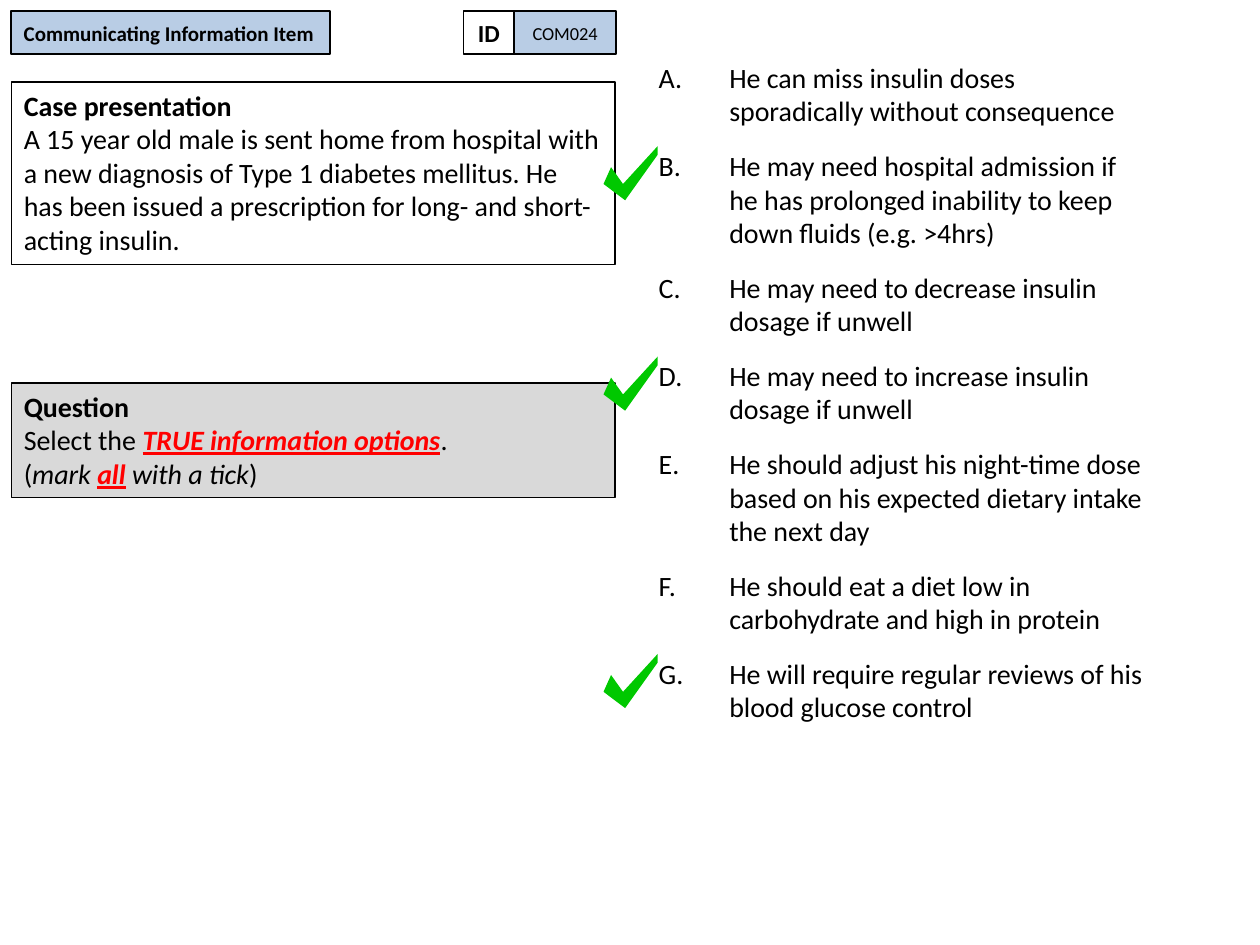
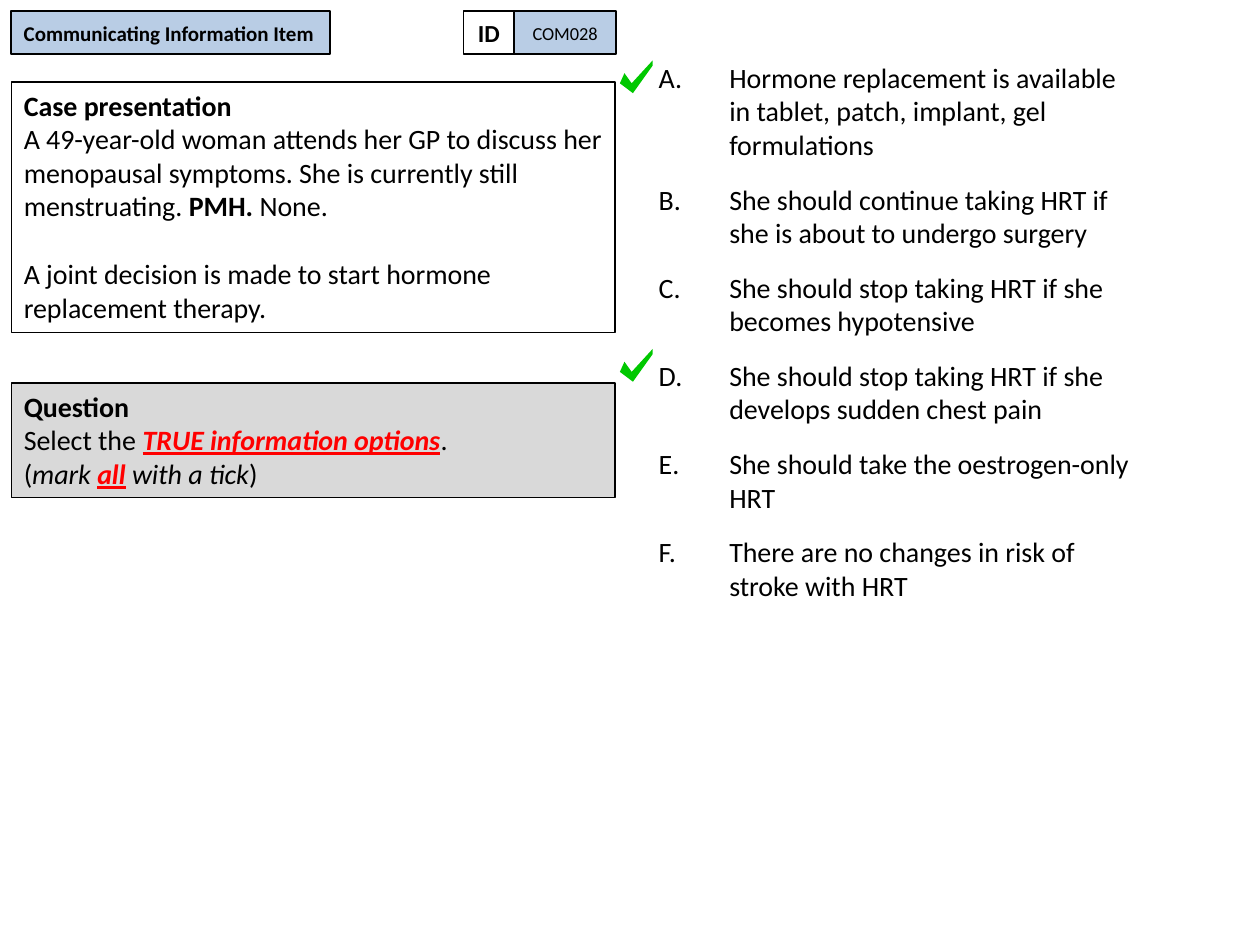
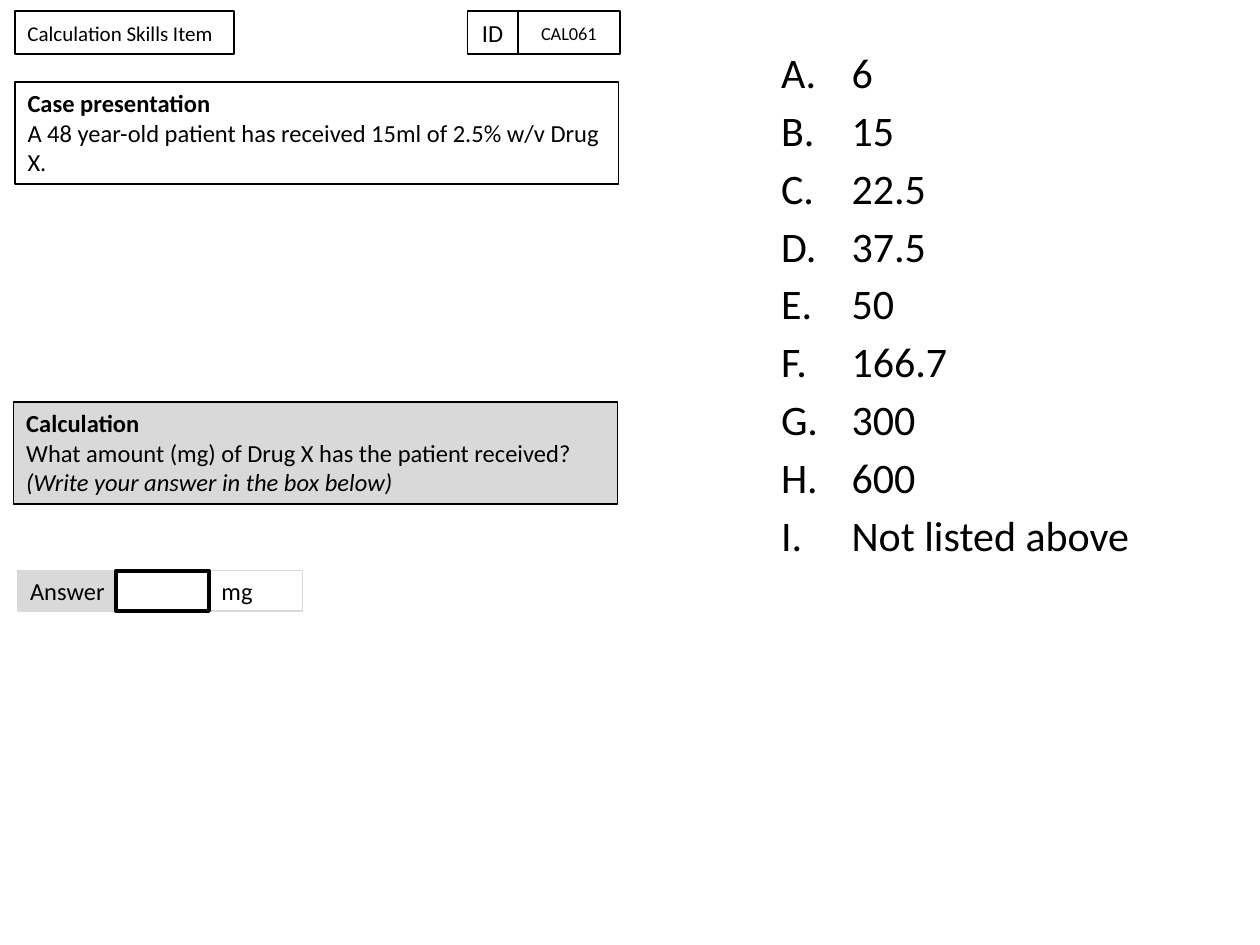
"""Build three quiz slides: two on telling patients facts, one on sums."""
import dataclasses

import lxml.etree
import pptx
import pptx.dml.color
import pptx.enum.shapes
import pptx.enum.text
import pptx.oxml.ns
import pptx.util

Inches = pptx.util.Inches
Pt = pptx.util.Pt
Align = pptx.enum.text.PP_ALIGN
Anchor = pptx.enum.text.MSO_ANCHOR


@dataclasses.dataclass(frozen=True)
class Theme:
    """Hold the colours, font and type sizes."""
    font: str = "Calibri"
    ink: str = "000000"
    paper: str = "FFFFFF"
    blue: str = "B9CDE5"
    grey: str = "D9D9D9"
    red: str = "FF0000"
    green: str = "00C800"
    code: float = 10.5
    title: float = 12
    small: float = 14
    body: float = 16
    large: float = 24


THEME = Theme()
TICK = [(0.14, 0.39), (0, 0.7), (0.4, 1), (1, 0.16), (1, 0), (0.36, 0.7)]
PANEL_WIDTH = 4.79
TASK = [
    [("Question", "b")],
    [("Select the ", ""), ("TRUE information options", "h"), (".", "")],
    [("(", ""), ("mark ", "i"), ("all", "h"), (" with a tick", "i"), (")", "")],
]


def tint(code):
    """Turn a hex code into a colour."""
    return pptx.dml.color.RGBColor.from_string(code)


def add_run(par, text, size, style=""):
    """Add a run; style letters are b bold, i italic, h hot."""
    run = par.add_run()
    run.text = text
    font = run.font
    hot = "h" in style
    font.name = THEME.font
    font.size = Pt(size)
    font.bold = hot or "b" in style
    font.italic = hot or "i" in style
    font.underline = hot
    font.color.rgb = tint(THEME.red if hot else THEME.ink)


def get_par(frame, index):
    """Return the first paragraph or add the next one."""
    return frame.add_paragraph() if index else frame.paragraphs[0]


def add_box(slide, place, fill=None, line=THEME.ink, weight=1):
    """Add a plain box with an outline."""
    box = slide.shapes.add_shape(
        pptx.enum.shapes.MSO_SHAPE.RECTANGLE, *map(Inches, place))
    box.shadow.inherit = False
    if fill:
        box.fill.solid()
        box.fill.fore_color.rgb = tint(fill)
    else:
        box.fill.background()
    box.line.color.rgb = tint(line)
    box.line.width = Pt(weight)
    box.text_frame.word_wrap = True
    return box


def add_tag(slide, place, text, size, style="", align=Align.LEFT, **look):
    """Add a box with one line of text in its middle."""
    frame = add_box(slide, place, **look).text_frame
    frame.vertical_anchor = Anchor.MIDDLE
    par = frame.paragraphs[0]
    par.alignment = align
    add_run(par, text, size, style)


def add_panel(slide, place, rows, size, fill=None, gaps=()):
    """Add a framed text panel; gaps are rows set off by a line."""
    frame = add_box(slide, place, fill, weight=0.75).text_frame
    frame.vertical_anchor = Anchor.TOP
    frame.auto_size = pptx.enum.text.MSO_AUTO_SIZE.SHAPE_TO_FIT_TEXT
    for index, row in enumerate(rows):
        par = get_par(frame, index)
        par.alignment = Align.LEFT
        if index in gaps:
            par.space_before = Pt(size * 1.22)
        for text, style in row:
            add_run(par, text, size, style)


def add_list(slide, place, items, size, gap):
    """Add the lettered answer list."""
    frame = slide.shapes.add_textbox(*map(Inches, place)).text_frame
    frame.word_wrap = True
    for index, item in enumerate(items):
        par = get_par(frame, index)
        par.space_before = Pt(gap)
        props = par._p.get_or_add_pPr()
        props.set("marL", str(Inches(0.56)))
        props.set("indent", str(Inches(-0.56)))
        lxml.etree.SubElement(
            props, pptx.oxml.ns.qn("a:buAutoNum"), type="alphaUcPeriod")
        add_run(par, item, size)


def add_tick(slide, left, top, size):
    """Add a green tick."""
    points = [(Inches(left + x * size), Inches(top + y * size))
              for x, y in TICK]
    pen = slide.shapes.build_freeform(*points[0], scale=1.0)
    pen.add_line_segments(points[1:], close=True)
    tick = pen.convert_to_shape()
    tick.shadow.inherit = False
    tick.fill.solid()
    tick.fill.fore_color.rgb = tint(THEME.green)
    tick.line.fill.background()


def add_head(slide, left, width, title, code, fill, style=""):
    """Add the title tag and the ID pair."""
    top, height = 0.09, 0.34
    add_tag(slide, (left, top, width, height), title, THEME.title, style,
            fill=fill)
    add_tag(slide, (left + 3.99, top, 0.81, height), code, THEME.code,
            align=Align.CENTER, fill=fill)
    add_tag(slide, (left + 3.59, top, 0.4, height), "ID", THEME.small, style,
            align=Align.CENTER)


def add_facts(slide, code, case, height, items, ticks, size, gaps=()):
    """Fill a slide that asks for the true options."""
    left = 0.09
    add_list(slide, (5.13, 0.43, 4.04, 6.27), items, THEME.body, 12)
    add_head(slide, left, 2.53, "Communicating Information Item", code,
             THEME.blue, "b")
    add_panel(slide, (left, 0.65, PANEL_WIDTH, height), case, THEME.body,
              gaps=gaps)
    add_panel(slide, (left, 3.04, PANEL_WIDTH, 0.91), TASK, THEME.body,
              THEME.grey)
    for x, y in ticks:
        add_tick(slide, x, y, size)


def add_sum(slide):
    """Fill the slide that asks for a dose."""
    left = 0.12
    items = ["6", "15", "22.5", "37.5", "50", "166.7", "300", "600",
             "Not listed above"]
    add_list(slide, (6.1, 0.32, 3.31, 6.4), items, THEME.large, 4.25)
    add_head(slide, left, 1.74, "Calculation Skills Item", "CAL061",
             THEME.paper)
    add_panel(slide, (left, 0.65, PANEL_WIDTH, 0.81), [
        [("Case presentation", "b")],
        [("A 48 year-old patient has received 15ml of 2.5% w/v Drug X.", "")],
    ], THEME.small)
    add_panel(slide, (0.11, 3.19, PANEL_WIDTH, 0.81), [
        [("Calculation", "b")],
        [("What amount (mg) of Drug X has the patient received?", "")],
        [("(Write your answer in the box below)", "i")],
    ], THEME.small, THEME.grey)
    top, height = 4.53, 0.32
    add_tag(slide, (0.14, top, 0.87, height), "Answer", THEME.small,
            fill=THEME.grey, line=THEME.grey, weight=0.75)
    add_tag(slide, (1.66, top, 0.74, height), "mg", THEME.small,
            line=THEME.grey, weight=0.75)
    add_box(slide, (0.92, top, 0.74, height), THEME.paper, weight=2)


def main():
    """Build and save the deck."""
    deck = pptx.Presentation()
    deck.slide_width, deck.slide_height = Inches(10), Inches(7.5)
    first, second, third = (
        deck.slides.add_slide(deck.slide_layouts[6]) for _ in range(3))

    add_facts(first, "COM024", [
        [("Case presentation", "b")],
        [("A 15 year old male is sent home from hospital with a new "
          "diagnosis of Type 1 diabetes mellitus. He has been issued a "
          "prescription for long- and short-acting insulin.", "")],
    ], 1.45, [
        "He can miss insulin doses sporadically without consequence",
        "He may need hospital admission if he has prolonged inability to "
        "keep down fluids (e.g. >4hrs)",
        "He may need to decrease insulin dosage if unwell",
        "He may need to increase insulin dosage if unwell",
        "He should adjust his night-time dose based on his expected dietary "
        "intake the next day",
        "He should eat a diet low in carbohydrate and high in protein",
        "He will require regular reviews of his blood glucose control",
    ], [(4.79, 1.16), (4.79, 2.83), (4.79, 5.19)], 0.43)

    add_facts(second, "COM028", [
        [("Case presentation", "b")],
        [("A 49-year-old woman attends her GP to discuss her menopausal "
          "symptoms. She is currently still menstruating. ", ""),
         ("PMH.", "b"), (" None.", "")],
        [("A joint decision is made to start hormone replacement therapy.",
          "")],
    ], 1.99, [
        "Hormone replacement is available in tablet, patch, implant, gel "
        "formulations",
        "She should continue taking HRT if she is about to undergo surgery",
        "She should stop taking HRT if she becomes hypotensive",
        "She should stop taking HRT if she develops sudden chest pain",
        "She should take the oestrogen-only HRT",
        "There are no changes in risk of stroke with HRT",
    ], [(4.92, 0.48), (4.92, 2.77)], 0.26, gaps=(2,))

    add_sum(third)
    deck.save("out.pptx")


if __name__ == "__main__":
    main()
